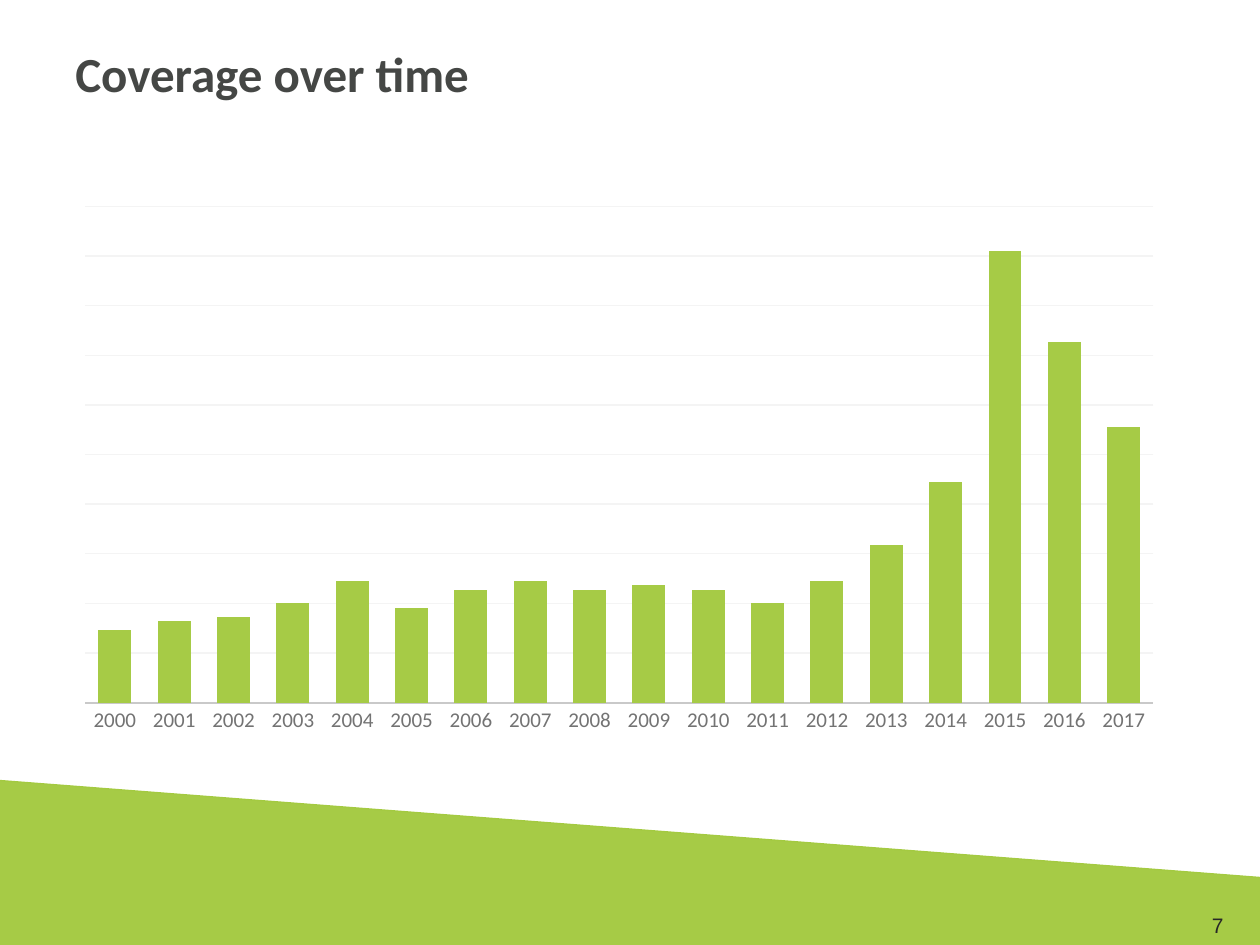
from pptx import Presentation
from pptx.chart.data import CategoryChartData
from pptx.dml.color import RGBColor
from pptx.enum.chart import XL_CHART_TYPE as ChartType, XL_TICK_MARK as TickMark
from pptx.enum.shapes import MSO_SHAPE as Shape
from pptx.enum.text import MSO_ANCHOR as Anchor, PP_ALIGN as Align
from pptx.util import Cm, Pt

GREEN = "A6CB46"
DARK = "272727"


def color(hex_value):
    return RGBColor.from_string(hex_value)


def style_font(font, formats):
    for name, value in formats.items():
        setattr(font, name, value)


prs = Presentation()
prs.slide_width, prs.slide_height = Cm(25.4), Cm(19.05)
slide = prs.slides.add_slide(prs.slide_layouts[6])

band = slide.shapes.add_shape(Shape.RECTANGLE, Cm(-0.69), Cm(16.71), Cm(26.59), Cm(3.38))
band.rotation = 4.4
band.shadow.inherit = False
band.fill.solid()
band.fill.fore_color.rgb = color(GREEN)
band.line.color.rgb = color("A4CA41")
band.line.width = Pt(0.75)

labels = [
    ("Coverage over time", (1.27, 0.76, 22.86, 2.21), Anchor.TOP, Align.LEFT,
     {"name": "Calibri", "size": Pt(28), "bold": True}, "454745"),
    ("7", (23.7, 18.26, 1.7, 0.79), Anchor.MIDDLE, Align.CENTER,
     {"name": "Arial", "size": Pt(12)}, DARK),
]
for wording, box, anchor, align, formats, text_color in labels:
    frame = slide.shapes.add_textbox(*map(Cm, box)).text_frame
    frame.word_wrap = True
    frame.vertical_anchor = anchor
    paragraph = frame.paragraphs[0]
    paragraph.alignment = align
    run = paragraph.add_run()
    run.text = wording
    style_font(run.font, formats)
    run.font.color.rgb = color(text_color)

coverage = CategoryChartData()
coverage.categories = [str(year) for year in range(2000, 2018)]
coverage.add_series("Series 1", [16, 18, 19, 22, 27, 21, 25, 27, 25,
                                 26, 25, 22, 27, 35, 49, 100, 80, 61])
chart = slide.shapes.add_chart(ChartType.COLUMN_CLUSTERED, Cm(1.27), Cm(3.94),
                               Cm(22.43), Cm(11.05), coverage).chart
chart.has_legend = False
chart.has_title = False
style_font(chart.font, {"name": "Calibri", "size": Pt(10)})
chart.font.color.rgb = color(DARK)

columns = chart.plots[0]
for name, value in {"gap_width": 80, "overlap": 25, "vary_by_categories": False}.items():
    setattr(columns, name, value)
bars = columns.series[0].format.fill
bars.solid()
bars.fore_color.rgb = color(GREEN)

years = chart.category_axis
years.major_tick_mark = TickMark.NONE
years.format.line.color.rgb = color("C9C9C9")
years.format.line.width = Pt(1.25)
style_font(years.tick_labels.font, {"name": "Calibri", "size": Pt(12)})
years.tick_labels.font.color.rgb = color("737373")

amounts = chart.value_axis
for name, value in {"minimum_scale": 0, "maximum_scale": 110, "major_unit": 11,
                    "has_major_gridlines": True, "visible": False}.items():
    setattr(amounts, name, value)
grid = amounts.major_gridlines.format.line
grid.color.rgb = color("F4F4F4")
grid.width = Pt(0.75)

prs.save("out.pptx")
